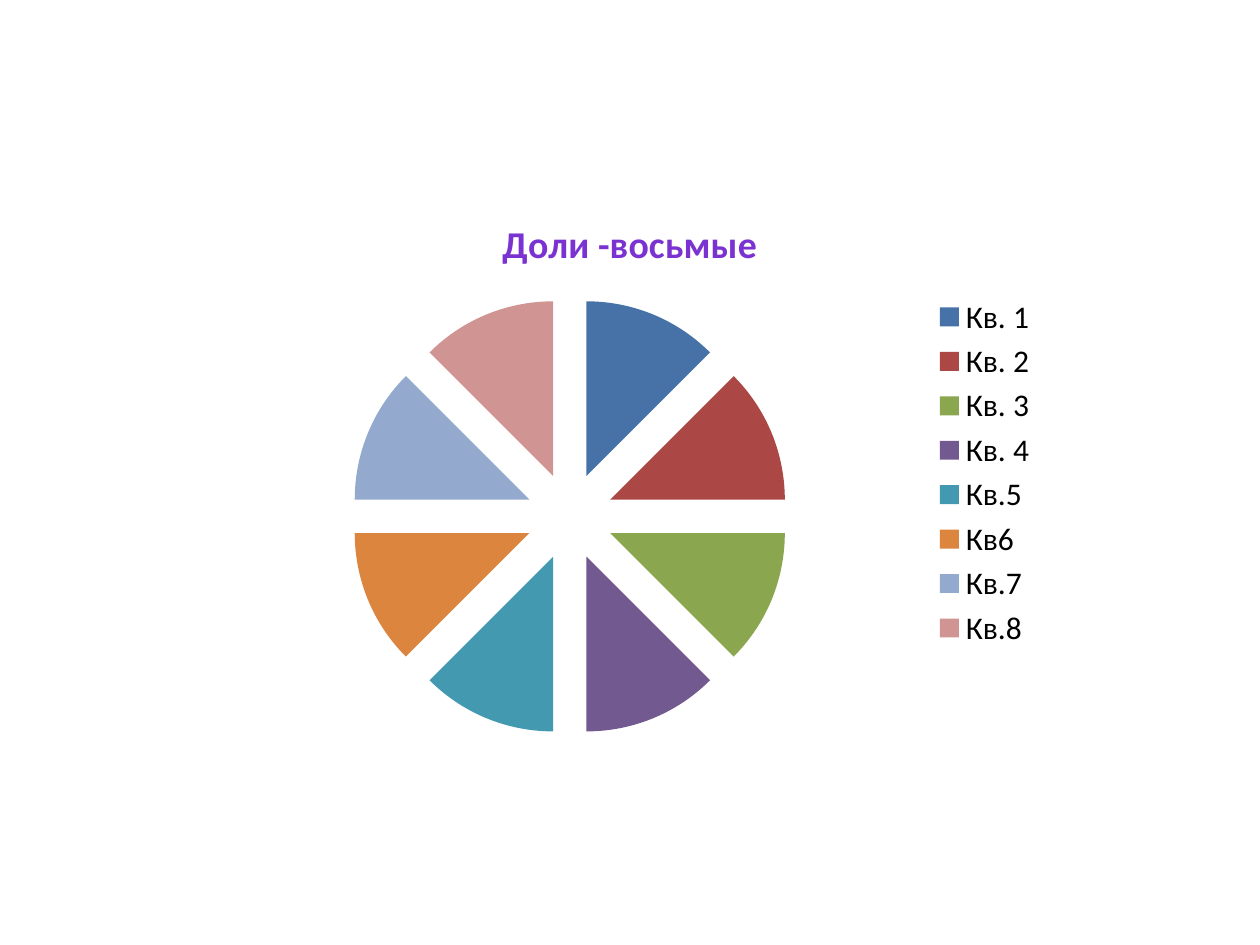
from dataclasses import dataclass

from lxml.etree import Element
from pptx import Presentation
from pptx.chart.data import CategoryChartData
from pptx.dml.color import RGBColor
from pptx.enum.chart import XL_CHART_TYPE, XL_LEGEND_POSITION
from pptx.oxml.ns import qn
from pptx.util import Inches, Pt


@dataclass(frozen=True)
class Theme:
    font: str = "Calibri"
    text_size: float = 18
    title_size: float = 21.6
    text: str = "000000"
    title: str = "7A33D0"
    slices: tuple = ("4672A8", "AB4744", "8AA64F", "725990",
                     "4299B0", "DC853E", "93A9CE", "D09493")


class SlideBuilder:
    def __init__(self, deck, theme):
        self.deck = deck
        self.theme = theme
        self.page = deck.slides.add_slide(deck.slide_layouts[6])

    def style_font(self, font, size, color, bold=False):
        font.name = self.theme.font
        font.size = Pt(size)
        font.bold = bold
        font.color.rgb = RGBColor.from_string(color)

    def exploded_pie(self, title, shares, area, explosion):
        """Draw a pie; area is left, top, width, height as shares of the slide."""
        theme = self.theme
        data = CategoryChartData(number_format="General")
        data.categories = list(shares)
        data.add_series(title, list(shares.values()))

        left, top, width, height = area
        slide_width, slide_height = self.deck.slide_width, self.deck.slide_height
        chart = self.page.shapes.add_chart(
            XL_CHART_TYPE.PIE,
            round(left * slide_width), round(top * slide_height),
            round(width * slide_width), round(height * slide_height), data,
        ).chart
        self.style_font(chart.font, theme.text_size, theme.text)

        chart.has_title = True
        para = chart.chart_title.text_frame.paragraphs[0]
        para.text = title
        self.style_font(para.font, theme.title_size, theme.title, bold=True)
        self.style_font(para.runs[0].font, theme.title_size, theme.title, bold=True)
        chart.chart_title.include_in_layout = False

        chart.has_legend = True
        chart.legend.position = XL_LEGEND_POSITION.RIGHT
        chart.legend.include_in_layout = False

        plot = chart.plots[0]
        plot.vary_by_categories = True
        series = plot.series[0]
        offset = Element(qn("c:explosion"), val=str(explosion))
        series._element.find(qn("c:cat")).addprevious(offset)
        for index, color in enumerate(theme.slices):
            fill = series.points[index].format.fill
            fill.solid()
            fill.fore_color.rgb = RGBColor.from_string(color)


def main():
    deck = Presentation()
    deck.slide_width, deck.slide_height = Inches(10), Inches(7.5)
    builder = SlideBuilder(deck, Theme())
    names = ("Кв. 1", "Кв. 2", "Кв. 3", "Кв. 4", "Кв.5", "Кв6", "Кв.7", "Кв.8")
    builder.exploded_pie("Доли -восьмые", dict.fromkeys(names, 12),
                         area=(1 / 6, 0.204, 2 / 3, 0.592), explosion=25)
    deck.save("out.pptx")


if __name__ == "__main__":
    main()
